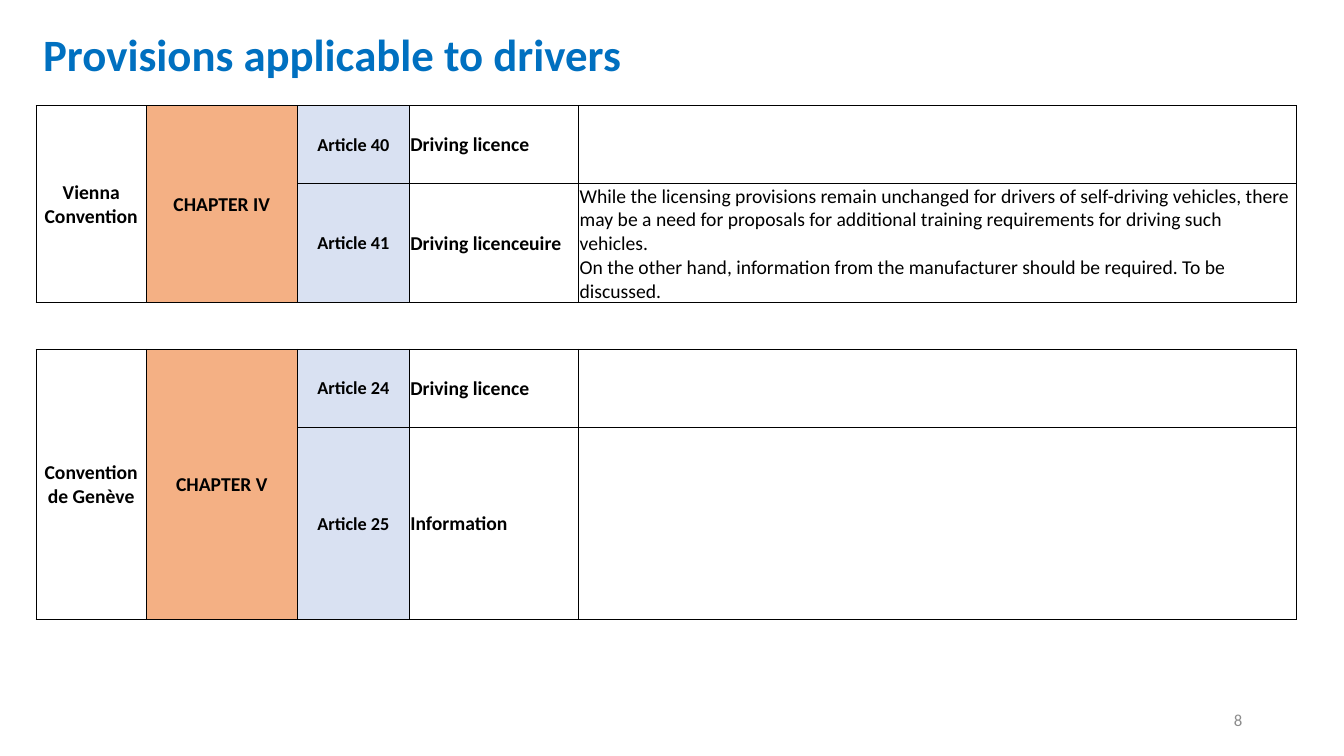
"""Build the slide on provisions applicable to drivers."""
import pptx
import pptx.util
import pptx.dml.color
import pptx.enum.text
import pptx.oxml
import pptx.oxml.ns

Inches, Pt = pptx.util.Inches, pptx.util.Pt
ALIGN, ANCHOR = pptx.enum.text.PP_ALIGN, pptx.enum.text.MSO_ANCHOR
HUES = {"title": "0070C0", "page": "8C8C8C", "text": "000000", "line": "000000",
        "plain": "FFFFFF", "chapter": "F4B084", "article": "D9E1F2"}


def style(para, size, hue, bold=False, align=ALIGN.LEFT):
    para.alignment = align
    para.font.name = "Calibri"
    para.font.size = Pt(size)
    para.font.bold = bold
    para.font.color.rgb = pptx.dml.color.RGBColor.from_string(HUES[hue])


def edge(cell, side, width):
    ink = f'<a:solidFill><a:srgbClr val="{HUES["line"]}"/></a:solidFill>' if width else "<a:noFill/>"
    cell._tc.get_or_add_tcPr().append(pptx.oxml.parse_xml(
        f'<a:ln{side} {pptx.oxml.ns.nsdecls("a")} w="{Pt(width)}">{ink}</a:ln{side}>'))


deck = pptx.Presentation()
deck.slide_width, deck.slide_height = Inches(13.33), Inches(7.5)
slide = deck.slides.add_slide(deck.slide_layouts[6])

labels = [
    ("Provisions applicable to drivers", (0.33, 0.08, 11.83, 0.97), 32, "title", True, ALIGN.LEFT),
    ("8", (9.42, 6.95, 3, 0.4), 12, "page", False, ALIGN.RIGHT),
]
for text, place, size, hue, bold, align in labels:
    frame = slide.shapes.add_textbox(*map(Inches, place)).text_frame
    frame.word_wrap = True
    frame.vertical_anchor = ANCHOR.MIDDLE
    frame.text = text
    style(frame.paragraphs[0], size, hue, bold, align)
    frame.paragraphs[0].line_spacing = 0.9

note = ("While the licensing provisions remain unchanged for drivers of self-driving vehicles, "
        "there may be a need for proposals for additional training requirements for driving such vehicles.\n"
        "On the other hand, information from the manufacturer should be required. To be discussed.")
rows = [
    ("Vienna Convention", "CHAPTER IV", "Article 40", "Driving licence", ""),
    ("", "", "Article 41", "Driving licenceuire", note),
    ("", "", "", "", ""),
    ("Convention de Genève", "CHAPTER V", "Article 24", "Driving licence", ""),
    ("", "", "Article 25", "Information", ""),
]
wide = [1.09, 1.5, 1.11, 1.68, 7.12]
high = [0.77, 0.95, 0.47, 0.77, 1.91]
fills = ["plain", "chapter", "article", "plain", "plain"]
sizes = [14, 14, 13, 14, 14]
gap, last = 2, len(wide) - 1

table = slide.shapes.add_table(len(high), len(wide), Inches(0.36), Inches(1.05),
                               Inches(sum(wide)), Inches(sum(high))).table
table.first_row = table.horz_banding = False
for col, width in zip(table.columns, wide):
    col.width = Inches(width)
for row, height in zip(table.rows, high):
    row.height = Inches(height)
for top in (0, 3):
    for c in (0, 1):
        table.cell(top, c).merge(table.cell(top + 1, c))

for r, row in enumerate(rows):
    for c, text in enumerate(row):
        cell = table.cell(r, c)
        side = 0 if r == gap else 0.5
        edge(cell, "L", side * 2 if c == 0 else side)
        edge(cell, "R", side * 2 if c == last else side)
        edge(cell, "T", 1 if r in (0, gap, 3) else 0.5)
        edge(cell, "B", 1 if r in (1, gap, 4) or cell.is_merge_origin else 0.5)
        cell.fill.solid()
        hue = "plain" if r == gap else fills[c]
        cell.fill.fore_color.rgb = pptx.dml.color.RGBColor.from_string(HUES[hue])
        if text:
            cell.text = text
            cell.vertical_anchor = ANCHOR.MIDDLE
            cell.margin_left = cell.margin_right = cell.margin_top = Inches(0.01)
            cell.margin_bottom = 0
            for para in cell.text_frame.paragraphs:
                style(para, sizes[c], "text", c < last, ALIGN.CENTER if c < 3 else ALIGN.LEFT)

deck.save("out.pptx")
